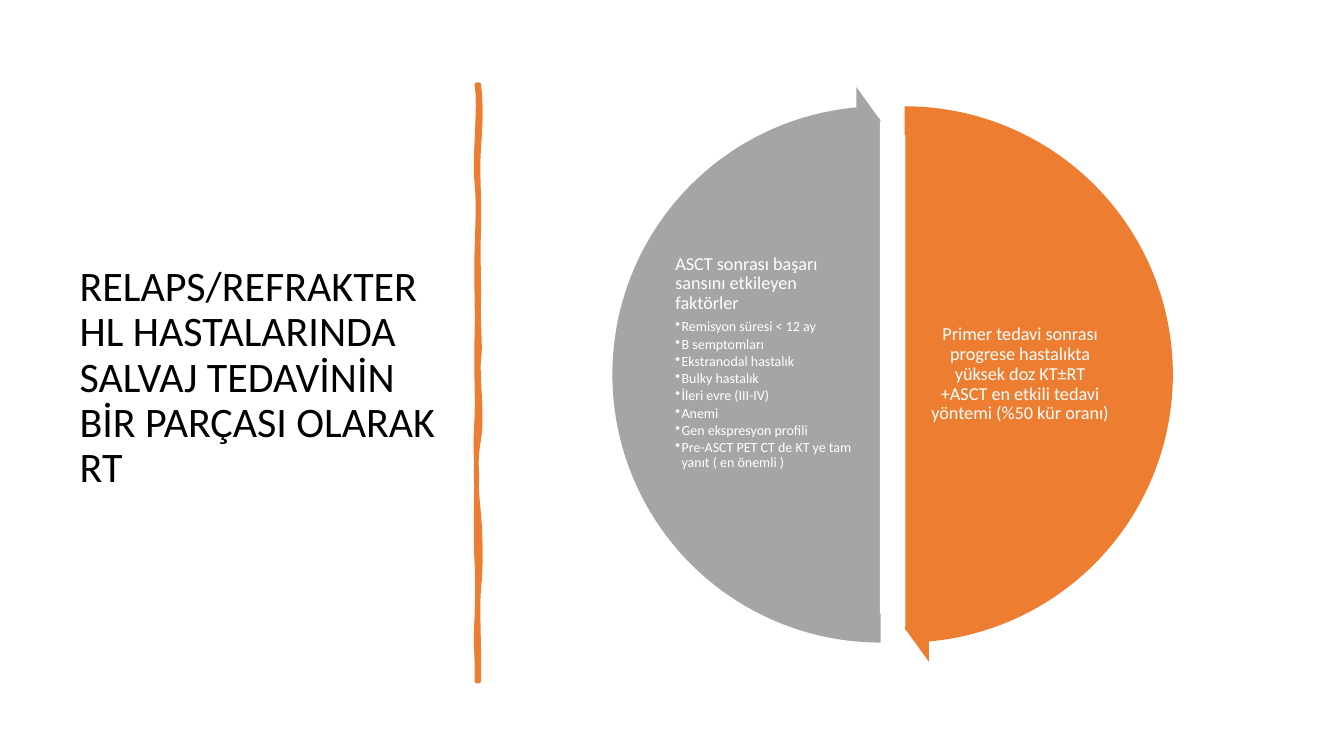
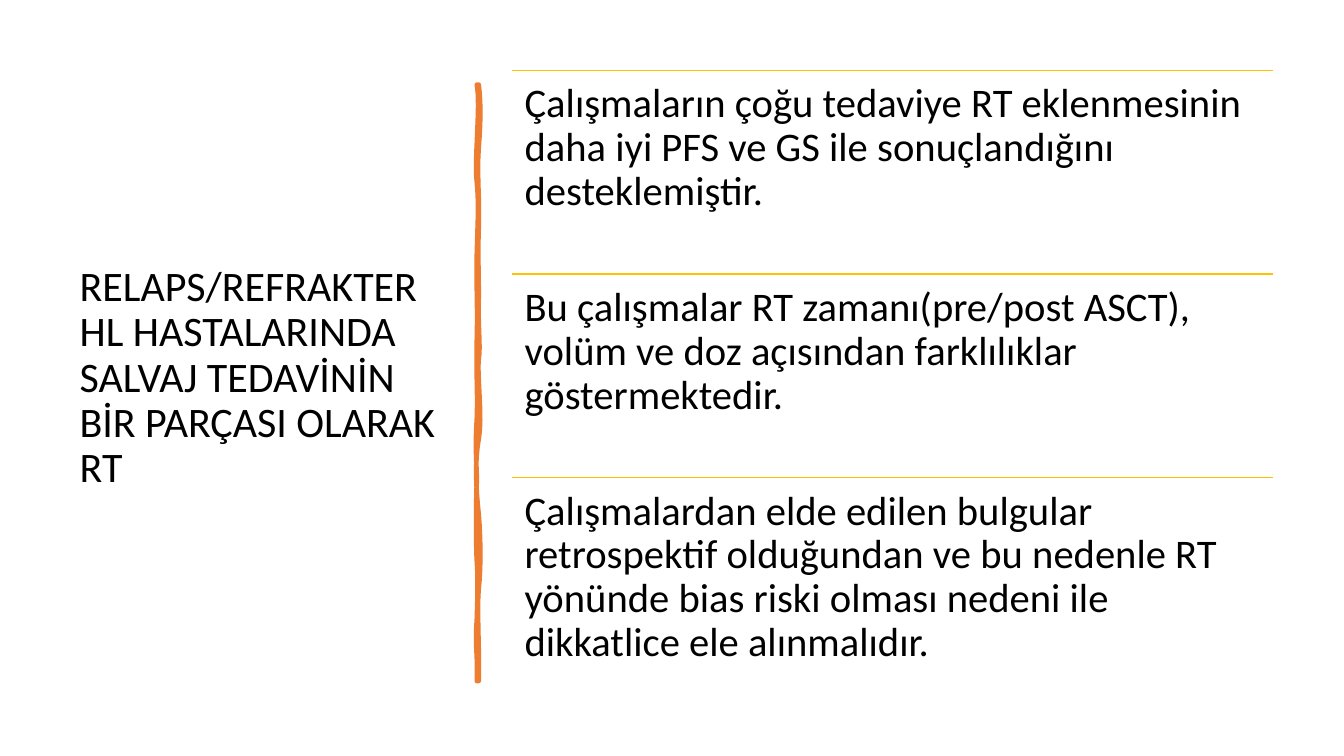
from dataclasses import dataclass
from typing import NamedTuple

from lxml import etree
from pptx import Presentation
from pptx import util as u
from pptx.dml.color import RGBColor
from pptx.enum import shapes, text
from pptx.oxml.ns import qn


@dataclass(frozen=True)
class Theme:
    font: str = "Calibri"
    ink: RGBColor = RGBColor(0, 0, 0)
    white: RGBColor = RGBColor(255, 255, 255)
    orange: RGBColor = RGBColor(0xED, 0x7D, 0x31)
    gray: RGBColor = RGBColor(0xA5, 0xA5, 0xA5)
    gold: RGBColor = RGBColor(0xFF, 0xC0, 0x00)
    title_size: float = 30
    statement_size: float = 29
    wheel_size: float = 13
    bullet_size: float = 10
    line_spacing: float = 0.9


class Box(NamedTuple):
    left: float
    top: float
    width: float
    height: float

    def points(self):
        return [u.Pt(length) for length in self]


THEME = Theme()
TITLE_BOX = Box(49.7, 50.4, 269.3, 440)
DIVIDER_BOX = Box(340.6, 60.5, 1.4, 426)
WHEEL_BOX = Box(445.7, 84.2, 383.8, 366.5)
STATEMENTS_BOX = Box(366, 50.4, 543.6, 436.3)

TITLE = "RELAPS/REFRAKTER HL HASTALARINDA SALVAJ TEDAVİNİN BİR PARÇASI OLARAK RT"
TREATMENT = ("Primer tedavi sonrası progrese hastalıkta yüksek doz KT±RT "
             "+ASCT en etkili tedavi yöntemi (%50 kür oranı)")
FACTORS_HEADING = "ASCT sonrası başarı sansını etkileyen faktörler"
FACTORS = [
    "Remisyon süresi < 12 ay",
    "B semptomları",
    "Ekstranodal hastalık",
    "Bulky hastalık",
    "İleri evre (III-IV)",
    "Anemi",
    "Gen ekspresyon profili",
    "Pre-ASCT PET CT de KT ye tam yanıt ( en önemli )",
]
STATEMENTS = [
    "Çalışmaların çoğu tedaviye RT eklenmesinin daha iyi PFS ve GS ile "
    "sonuçlandığını desteklemiştir.",
    "Bu çalışmalar RT zamanı(pre/post ASCT), volüm ve doz açısından "
    "farklılıklar göstermektedir.",
    "Çalışmalardan elde edilen bulgular retrospektif olduğundan ve bu nedenle "
    "RT yönünde bias riski olması nedeni ile dikkatlice ele alınmalıdır.",
]

# Divider edges: first control x, y, second control x, y, end y
RIGHT_EDGE = [
    (2.2, 13, 2.2, 25, 45), (-0.7, 64, 1.4, 80, 102),
    (0, 125, 0.7, 128, 151), (0, 174, 2.2, 186, 196),
    (-0.7, 206, 3.6, 238, 253), (-2.2, 269, -1.4, 288, 307),
    (2.2, 325, 2.2, 346, 360), (-0.7, 374, 1.4, 408, 426),
]
LEFT_EDGE = [
    (0, 405, -2.2, 403, 381), (0, 359, 0, 350, 341),
    (-1.4, 331, -1.4, 296, 283), (-0.7, 270, -2.2, 260, 238),
    (0, 217, -1.4, 208, 181), (0, 154, -1.4, 142, 120),
    (0, 96, 0.7, 84, 70), (-2.9, 57, 2.2, 14, 0),
]


def write(frame, content, size, color=THEME.ink, align=text.PP_ALIGN.LEFT,
          space_after=0.0, bullet_indent=0.0):
    """Add one formatted paragraph to a text frame."""
    paragraph = frame.paragraphs[0]
    if paragraph.runs:
        paragraph = frame.add_paragraph()
    paragraph.alignment = align
    paragraph.line_spacing = THEME.line_spacing
    paragraph.space_after = u.Pt(space_after)
    if bullet_indent:
        properties = paragraph._p.get_or_add_pPr()
        properties.set("marL", str(u.Pt(bullet_indent)))
        properties.set("indent", str(-u.Pt(bullet_indent)))
        etree.SubElement(properties, qn("a:buChar")).set("char", "•")
    run = paragraph.add_run()
    run.text = content
    run.font.name = THEME.font
    run.font.size = u.Pt(size)
    run.font.color.rgb = color


def add_text_frame(slide, box, margin, anchor=text.MSO_ANCHOR.TOP):
    frame = slide.shapes.add_textbox(*box.points()).text_frame
    frame.word_wrap = True
    frame.vertical_anchor = anchor
    frame.margin_left = frame.margin_right = u.Pt(margin)
    frame.margin_top = frame.margin_bottom = u.Pt(margin)
    return frame


def paint(shape, fill, line=None, line_width=1.0):
    shape.shadow.inherit = False
    shape.fill.solid()
    shape.fill.fore_color.rgb = fill
    if line is None:
        shape.line.fill.background()
    else:
        shape.line.color.rgb = line
        shape.line.width = u.Pt(line_width)


def add_preset(slide, kind, box, adjustments, fill, line=None):
    shape = slide.shapes.add_shape(kind, *box.points())
    for index, value in enumerate(adjustments):
        shape.adjustments[index] = value
    paint(shape, fill, line)


def trace_edge(edge, x, y, steps=8):
    """Sample the curves of one divider edge that keeps returning to x."""
    for x1, y1, x2, y2, end in edge:
        for step in range(1, steps + 1):
            t = step / steps
            s = 1 - t
            yield (x * (s**3 + t**3) + 3 * s * t * (s * x1 + t * x2),
                   y * s**3 + 3 * s * t * (s * y1 + t * y2) + end * t**3)
        y = end


def add_divider(slide, box):
    """Draw the hand-drawn vertical stroke."""
    half = box.width / 2
    outline = [(half, 0), *trace_edge(RIGHT_EDGE, half, 0),
               (-half, box.height), *trace_edge(LEFT_EDGE, -half, box.height)]
    units = [(round(x * 100), round(y * 100)) for x, y in outline]
    builder = slide.shapes.build_freeform(*units[0], scale=u.Pt(1) / 100)
    builder.add_line_segments(units[1:], close=True)
    stroke = builder.convert_to_shape(u.Pt(box.left + half), u.Pt(box.top))
    paint(stroke, THEME.orange, THEME.orange, 3.25)
    etree.SubElement(stroke.line._get_or_add_ln(), qn("a:round"))


def add_titled_slide(presentation):
    """Create a slide with the shared title and divider."""
    slide = presentation.slides.add_slide(presentation.slide_layouts[5])
    title = slide.shapes.title
    title.left, title.top, title.width, title.height = TITLE_BOX.points()
    frame = title.text_frame
    frame.word_wrap = True
    frame.auto_size = text.MSO_AUTO_SIZE.NONE
    frame.vertical_anchor = text.MSO_ANCHOR.MIDDLE
    write(frame, TITLE, THEME.title_size)
    add_divider(slide, DIVIDER_BOX)
    return slide


def add_wheel_half(slide, box, start, end, arrow_end, fill, label_left, anchor):
    """Draw a half disc with its arrow; return the frame for its text."""
    add_preset(slide, shapes.MSO_SHAPE.PIE, box, [start, end], fill, THEME.white)
    rim = 22.7
    arrow_box = Box(box.left - rim, box.top - rim,
                    box.width + 2 * rim, box.height + 2 * rim)
    add_preset(slide, shapes.MSO_SHAPE.CIRCULAR_ARROW, arrow_box,
               [0.05, 3.28, arrow_end, start, 0.06], fill)
    label_height = 174.2
    label_box = Box(box.left + label_left,
                    box.top + (box.height - label_height) / 2, 131, label_height)
    return add_text_frame(slide, label_box, 1.3, anchor)


def add_wheel(slide, box):
    """Place the two halves at the left and right ends of the box."""
    size, label_inset, label_width = box.height, 35.4, 131
    top_angle, bottom_angle = 162, 54
    right_box = Box(box.left + box.width - size, box.top, size, size)
    left_box = Box(box.left, box.top, size, size)

    # Right half: treatment
    frame = add_wheel_half(slide, right_box, top_angle, bottom_angle, 50.73,
                           THEME.orange, size - label_inset - label_width,
                           text.MSO_ANCHOR.MIDDLE)
    write(frame, TREATMENT, THEME.wheel_size, color=THEME.white,
          align=text.PP_ALIGN.CENTER, space_after=4.5)

    # Left half: success factors
    frame = add_wheel_half(slide, left_box, bottom_angle, top_angle, 158.73,
                           THEME.gray, label_inset, text.MSO_ANCHOR.TOP)
    write(frame, FACTORS_HEADING, THEME.wheel_size, color=THEME.white,
          space_after=4.5)
    for factor in FACTORS:
        write(frame, factor, THEME.bullet_size, color=THEME.white,
              space_after=1.5, bullet_indent=4.5)


def add_rule(slide, left, top, width):
    rule = slide.shapes.add_connector(
        shapes.MSO_CONNECTOR.STRAIGHT,
        u.Pt(left), u.Pt(top), u.Pt(left + width), u.Pt(top))
    rule.line.color.rgb = THEME.gold
    rule.line.width = u.Pt(1)
    etree.SubElement(rule._element.spPr, qn("a:effectLst"))


def add_statements(slide, box):
    """Stack equal rows, each under a rule."""
    row_height = box.height / len(STATEMENTS)
    for index, statement in enumerate(STATEMENTS):
        row = Box(box.left, box.top + index * row_height, box.width, row_height)
        add_rule(slide, row.left, row.top, row.width)
        frame = add_text_frame(slide, row, 8.7)
        write(frame, statement, THEME.statement_size, space_after=10)


def main():
    presentation = Presentation()
    presentation.slide_width = u.Pt(960)
    presentation.slide_height = u.Pt(540)
    add_wheel(add_titled_slide(presentation), WHEEL_BOX)
    add_statements(add_titled_slide(presentation), STATEMENTS_BOX)
    presentation.save("out.pptx")


if __name__ == "__main__":
    main()
